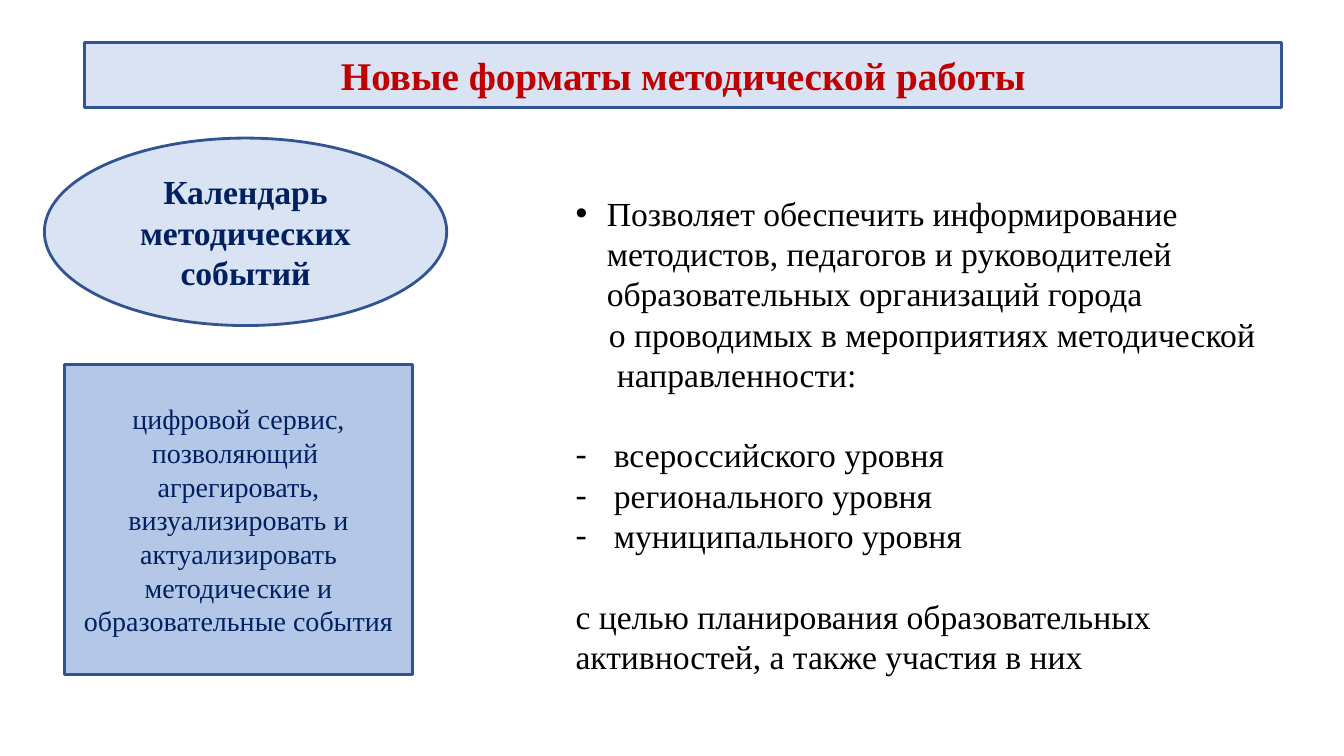
from dataclasses import dataclass

from lxml.etree import SubElement
from pptx import Presentation
from pptx.dml.color import RGBColor as Color
from pptx.enum.shapes import MSO_SHAPE as Preset
from pptx.enum.text import MSO_ANCHOR as Anchor, MSO_AUTO_SIZE as AutoSize, PP_ALIGN as Align
from pptx.oxml.ns import qn
from pptx.util import Inches, Pt


@dataclass(frozen=True)
class Theme:
    font: str = "Times New Roman"
    pale: str = "DAE3F3"
    blue: str = "B4C7E7"
    outline: str = "325491"
    red: str = "C00000"
    navy: str = "002060"
    black: str = "000000"
    title_size: int = 28
    body_size: int = 24
    note_size: int = 20
    line_width: int = 2
    blank_line: float = 28.8


class SlideBuilder:
    def __init__(self, slide, theme):
        self.slide = slide
        self.theme = theme

    def add_text(self, paragraph, text, size, color, bold=False):
        run = paragraph.add_run()
        run.text = text
        font_format = {"name": self.theme.font, "size": Pt(size), "bold": bold}
        for name, value in font_format.items():
            setattr(run.font, name, value)
        run.font.color.rgb = Color.from_string(color)

    def indent(self, paragraph, margin, marker=None):
        properties = paragraph._p.get_or_add_pPr()
        properties.set("marL", str(Inches(margin)))
        if not marker:
            return
        properties.set("indent", str(-Inches(margin)))
        bullet_color = SubElement(properties, qn("a:buClr"))
        SubElement(bullet_color, qn("a:srgbClr"), val=self.theme.black)
        SubElement(properties, qn("a:buFont"), typeface="Arial" if marker == "•" else self.theme.font)
        SubElement(properties, qn("a:buChar"), char=marker)

    def panel(self, preset, box, fill, lines, size, color, bold=False):
        shape = self.slide.shapes.add_shape(preset, *map(Inches, box))
        shape.shadow.inherit = False
        shape.fill.solid()
        shape.fill.fore_color.rgb = Color.from_string(fill)
        shape.line.color.rgb = Color.from_string(self.theme.outline)
        shape.line.width = Pt(self.theme.line_width)
        frame = shape.text_frame
        for name, value in {"word_wrap": True, "vertical_anchor": Anchor.MIDDLE}.items():
            setattr(frame, name, value)
        for index, text in enumerate(lines):
            paragraph = frame.add_paragraph() if index else frame.paragraphs[0]
            paragraph.alignment = Align.CENTER
            self.add_text(paragraph, text, size, color, bold)

    def text_list(self, box, items):
        """Each item: text, left margin, marker, gap above."""
        frame = self.slide.shapes.add_textbox(*map(Inches, box)).text_frame
        for name, value in {"word_wrap": True, "auto_size": AutoSize.SHAPE_TO_FIT_TEXT}.items():
            setattr(frame, name, value)
        for index, (text, margin, marker, gap) in enumerate(items):
            paragraph = frame.add_paragraph() if index else frame.paragraphs[0]
            paragraph.space_before = Pt(gap)
            self.indent(paragraph, margin, marker)
            self.add_text(paragraph, text, self.theme.body_size, self.theme.black)


def main():
    presentation = Presentation()
    presentation.slide_width = Inches(13.33)
    presentation.slide_height = Inches(7.5)
    theme = Theme()
    builder = SlideBuilder(presentation.slides.add_slide(presentation.slide_layouts[6]), theme)

    # Title bar
    builder.panel(Preset.RECTANGLE, (0.84, 0.42, 11.87, 0.65), theme.pale,
                  ["Новые форматы методической работы"], theme.title_size, theme.red, bold=True)

    # Service name and its description
    builder.panel(Preset.OVAL, (0.44, 1.37, 3.99, 1.86), theme.pale,
                  ["Календарь методических событий"], theme.body_size, theme.navy, bold=True)
    builder.panel(Preset.RECTANGLE, (0.64, 3.62, 3.45, 3.07), theme.blue,
                  ["цифровой сервис, позволяющий ",
                   "агрегировать, визуализировать и актуализировать "
                   "методические и образовательные события"],
                  theme.note_size, theme.navy)

    # Purpose, event levels and goal
    gap = theme.blank_line
    levels = ["всероссийского", "регионального", "муниципального"]
    builder.text_list((5.61, 1.86, 7.29, 4.95), [
        ("Позволяет обеспечить информирование методистов, педагогов и руководителей "
         "образовательных организаций города", 0.31, "•", 0),
        ("о проводимых в мероприятиях методической", 0.33, None, 0),
        ("направленности:", 0.41, None, 0),
        *[(f"{level} уровня", 0.38, "-", 0 if index else gap) for index, level in enumerate(levels)],
        ("с целью планирования образовательных активностей, а также участия в них", 0, None, gap),
    ])

    presentation.save("out.pptx")


if __name__ == "__main__":
    main()
